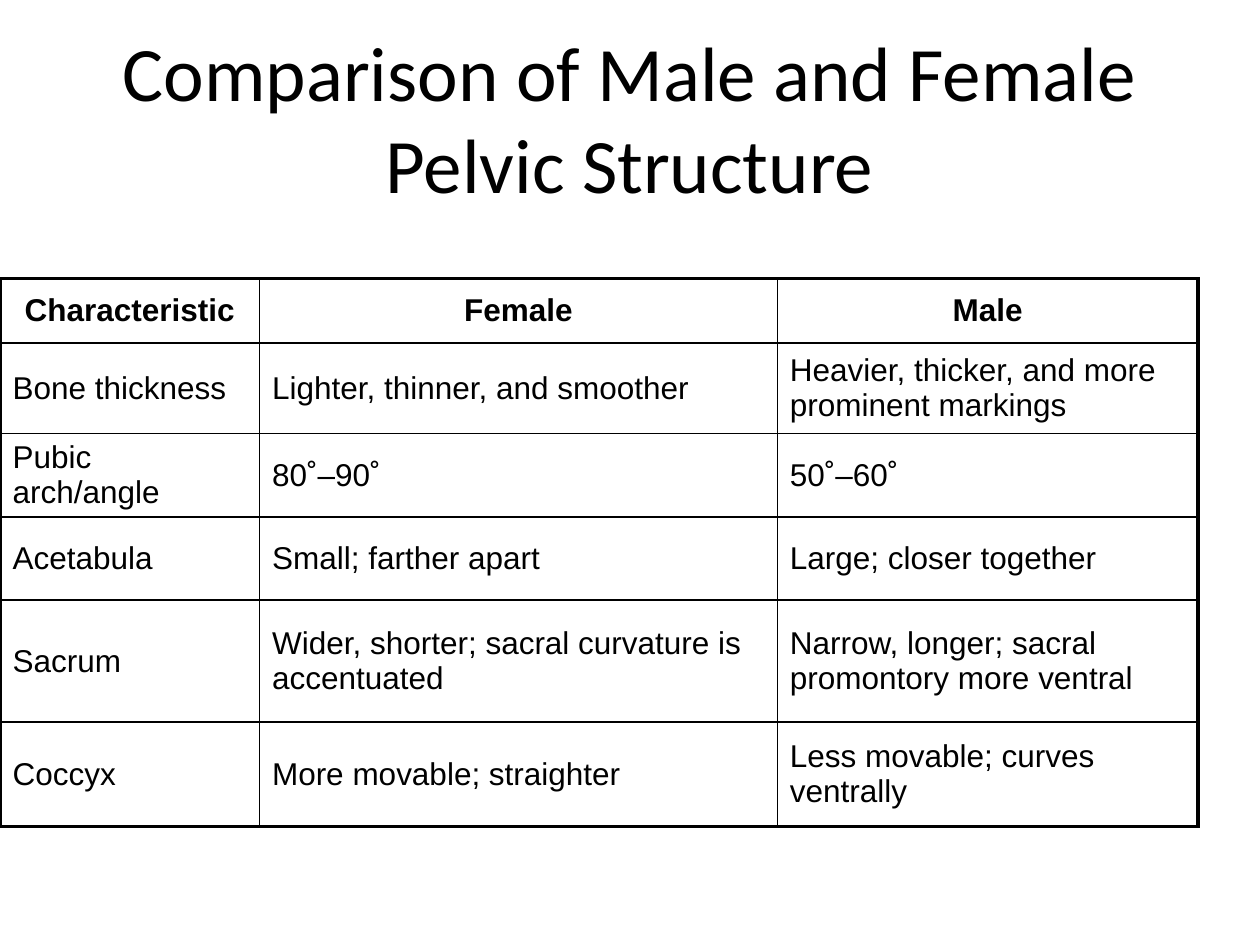
from lxml.etree import SubElement
from pptx import Presentation
from pptx.dml.color import RGBColor
from pptx.enum.text import MSO_ANCHOR as Anchor, PP_ALIGN as Align
from pptx.oxml.ns import qn
from pptx.util import Pt

COLORS = {"ink": "000000", "paper": "FFFFFF"}
THIN, THICK = 1, 2.25
COLUMN_WIDTHS = [148.3, 295.9, 240.5]
ROW_HEIGHTS = [36.7, 51.8, 43.4, 47.6, 69.8, 59.6]
COMPARISON = [
    ("Characteristic", "Female", "Male"),
    ("Bone thickness", "Lighter, thinner, and smoother",
     "Heavier, thicker, and more prominent markings"),
    ("Pubic arch/angle", "80˚–90˚", "50˚–60˚"),
    ("Acetabula", "Small; farther apart", "Large; closer together"),
    ("Sacrum", "Wider, shorter; sacral curvature is accentuated",
     "Narrow, longer; sacral promontory more ventral"),
    ("Coccyx", "More movable; straighter", "Less movable; curves ventrally"),
]


def write(frame, text, font, size, align, bold=False):
    paragraph = frame.paragraphs[0]
    paragraph.alignment = align
    run = paragraph.add_run()
    run.text = text
    run.font.name = font
    run.font.size = Pt(size)
    run.font.bold = bold
    run.font.color.rgb = RGBColor.from_string(COLORS["ink"])


def add_title(slide, text):
    title = slide.shapes.add_textbox(Pt(36), Pt(21.6), Pt(648), Pt(90))
    frame = title.text_frame
    frame.word_wrap = True
    frame.vertical_anchor = Anchor.MIDDLE
    write(frame, text, "Calibri", 44, Align.CENTER)


def set_borders(cell, widths):
    """Draw the cell's borders; widths maps L, R, T, B, in that order, to points."""
    properties = cell._tc.get_or_add_tcPr()
    for side, width in widths.items():
        line = SubElement(properties, qn(f"a:ln{side}"), w=str(Pt(width)))
        fill = SubElement(line, qn("a:solidFill"))
        SubElement(fill, qn("a:srgbClr"), val=COLORS["ink"])


def add_comparison_table(slide):
    row_count, column_count = len(ROW_HEIGHTS), len(COLUMN_WIDTHS)
    table = slide.shapes.add_table(
        row_count, column_count, Pt(0), Pt(159.3),
        Pt(sum(COLUMN_WIDTHS)), Pt(sum(ROW_HEIGHTS))).table
    table.first_row = table.horz_banding = False
    for column, width in zip(table.columns, COLUMN_WIDTHS):
        column.width = Pt(width)
    for row, height in zip(table.rows, ROW_HEIGHTS):
        row.height = Pt(height)

    for r, texts in enumerate(COMPARISON):
        for c, text in enumerate(texts):
            cell = table.cell(r, c)
            is_header = r == 0
            outer = {"L": c == 0, "R": c == column_count - 1,
                     "T": is_header, "B": r == row_count - 1}
            set_borders(cell, {side: THICK if edge else THIN
                               for side, edge in outer.items()})
            cell.fill.background()
            cell.vertical_anchor = Anchor.MIDDLE
            write(cell.text_frame, text, "Arial", 18,
                  Align.CENTER if is_header else Align.LEFT, is_header)


def main():
    deck = Presentation()
    deck.slide_width, deck.slide_height = Pt(720), Pt(540)
    slide = deck.slides.add_slide(deck.slide_layouts[6])
    background = slide.background.fill
    background.solid()
    background.fore_color.rgb = RGBColor.from_string(COLORS["paper"])
    add_comparison_table(slide)
    add_title(slide, "Comparison of Male and Female Pelvic Structure")
    deck.save("out.pptx")


if __name__ == "__main__":
    main()
